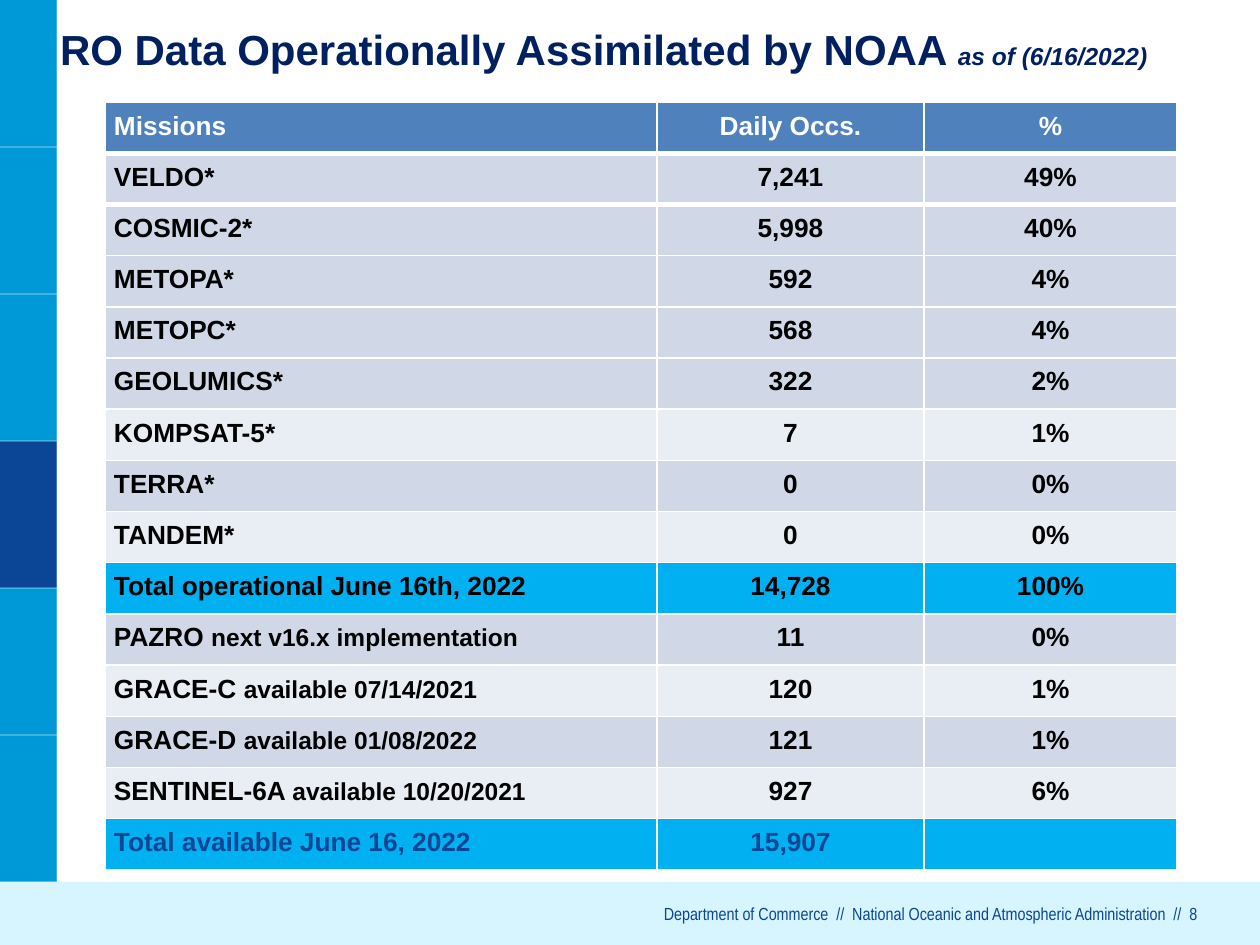
from dataclasses import dataclass
from lxml.etree import SubElement as Sub
from pptx import Presentation
from pptx.dml.color import RGBColor as RGB
from pptx.enum.shapes import MSO_CONNECTOR as Conn, MSO_SHAPE as Kind
from pptx.enum.text import MSO_ANCHOR as Anchor, MSO_AUTO_SIZE as Fit, PP_ALIGN as Align
from pptx.oxml.ns import qn
from pptx.util import Pt


@dataclass(frozen=True)
class Theme:
    sans: str = "Arial"
    thin: str = "Arial Narrow"
    white: str = "FFFFFF"
    black: str = "000000"
    navy: str = "002060"
    sky: str = "0099D8"
    deep: str = "0B4596"
    pale: str = "D6F5FF"
    head: str = "4F81BD"
    dark: str = "D0D8E8"
    light: str = "E9EDF4"
    total: str = "00B0F0"
    big: int = 24
    mid: int = 15
    small: int = 14
    foot: int = 10


T = Theme()
SCALE = 914400 / 126

# Each row: fill, text colour, name runs, daily count, share
ROWS = [
    (T.head, T.white, ["Missions"], "Daily Occs.", "%"),
    (T.dark, T.black, ["VELDO*"], "7,241", "49%"),
    (T.dark, T.black, ["COSMIC-2*"], "5,998", "40%"),
    (T.dark, T.black, ["METOPA*"], "592", "4%"),
    (T.dark, T.black, ["METOPC*"], "568", "4%"),
    (T.dark, T.black, ["GEOLUMICS*"], "322", "2%"),
    (T.light, T.black, ["KOMPSAT-5*"], "7", "1%"),
    (T.dark, T.black, ["TERRA*"], "0", "0%"),
    (T.light, T.black, ["TANDEM*"], "0", "0%"),
    (T.total, T.black, ["Total operational June 16th, 2022"], "14,728", "100%"),
    (T.dark, T.black, ["PAZRO ", "next v16.x implementation"], "11", "0%"),
    (T.light, T.black, ["GRACE-C ", "available 07/14/2021"], "120", "1%"),
    (T.dark, T.black, ["GRACE-D ", "available 01/08/2022"], "121", "1%"),
    (T.light, T.black, ["SENTINEL-6A ", "available 10/20/2021"], "927", "6%"),
    (T.total, T.deep, ["Total available June 16, 2022"], "15,907", ""),
]


def px(n):
    return round(n * SCALE)


def add_run(para, text, size, color, bold=False, slant=False, face=T.sans):
    run = para.add_run()
    run.text = text
    font = run.font
    font.name, font.size = face, Pt(size)
    font.bold, font.italic = bold, slant
    font.color.rgb = RGB.from_string(color)


def set_frame(frame, anchor):
    frame.margin_left = frame.margin_right = 0
    frame.margin_top = frame.margin_bottom = 0
    frame.word_wrap, frame.auto_size = True, Fit.NONE
    frame.vertical_anchor = anchor


def add_rect(shapes, box, color):
    rect = shapes.add_shape(Kind.RECTANGLE, *map(px, box))
    rect.shadow.inherit = False
    rect.fill.solid()
    rect.fill.fore_color.rgb = RGB.from_string(color)
    rect.line.fill.background()


def add_rule(shapes, *ends):
    rule = shapes.add_connector(Conn.STRAIGHT, *map(px, ends))
    rule.line.width = Pt(0.75)
    rule.line.color.rgb = RGB.from_string(T.white)
    props = rule.element.spPr
    tint = props.find(".//" + qn("a:srgbClr"))
    Sub(tint, qn("a:alpha"), val="40000")
    Sub(props, qn("a:effectLst"))


def add_rail(slide, box):
    """Side rail of equal tiles, one of them highlighted."""
    x, y, w, h = box
    tile = 147
    shapes = slide.shapes.add_group_shape().shapes
    add_rect(shapes, box, T.sky)
    add_rect(shapes, (x, y + 3 * tile, w, tile), T.deep)
    for i in range(1, 7):
        add_rule(shapes, x, y + i * tile, x + w, y + i * tile)
    add_rule(shapes, x + w, y, x + w, y + h)


def add_footer(slide, box):
    x, y, w, h = box
    add_rect(slide.shapes, box, T.pale)
    note = slide.shapes.add_textbox(*map(px, (x + 199, y + 21, w - 262, 21)))
    set_frame(note.text_frame, Anchor.TOP)
    para = note.text_frame.paragraphs[0]
    para.alignment = Align.RIGHT
    text = "Department of Commerce  //  National Oceanic and Atmospheric Administration  //  8"
    add_run(para, text, T.foot, T.deep, face=T.thin)


def add_edges(cell, top, base):
    props = cell._tc.get_or_add_tcPr()
    for side, width in (("L", 1), ("R", 1), ("T", top), ("B", base)):
        edge = Sub(props, qn("a:ln" + side), w=str(Pt(width)))
        Sub(Sub(edge, qn("a:solidFill")), qn("a:srgbClr"), val=T.white)


def fill_cell(cell, fill, color, runs, align):
    cell.fill.solid()
    cell.fill.fore_color.rgb = RGB.from_string(fill)
    cell.margin_left = cell.margin_right = px(9)
    cell.margin_top = cell.margin_bottom = px(5)
    para = cell.text_frame.paragraphs[0]
    para.alignment, para.line_spacing = align, 1.15
    for text, size in zip(runs, (T.mid, T.small)):
        if text:
            add_run(para, text, size, color, bold=True)


def add_grid(slide, box):
    """Mission table; thick rules lie under the first two rows."""
    frame = slide.shapes.add_table(len(ROWS), 3, *map(px, box))
    table = frame.table
    table.first_row = table.horz_banding = False
    for col, w in zip(table.columns, (552, 267, box[2] - 819)):
        col.width = px(w)
    for i, (fill, color, name, count, share) in enumerate(ROWS):
        table.rows[i].height = px(box[3] / len(ROWS))
        top, base = 3 if i in (1, 2) else 1, 3 if i < 2 else 1
        for j, runs in enumerate((name, [count], [share])):
            cell = table.cell(i, j)
            add_edges(cell, top, base)
            fill_cell(cell, fill, color, runs, Align.CENTER if j else Align.LEFT)


def set_title(slide, box):
    title = slide.shapes.title
    title.left, title.top, title.width, title.height = map(px, box)
    set_frame(title.text_frame, Anchor.BOTTOM)
    para = title.text_frame.paragraphs[0]
    para.alignment = Align.LEFT
    add_run(para, "RO Data Operationally Assimilated by NOAA ", T.big, T.navy, bold=True)
    add_run(para, "as of (6/16/2022)", T.small, T.navy, bold=True, slant=True)


def main():
    deck = Presentation()
    deck.slide_width, deck.slide_height = px(1260), px(945)
    slide = deck.slides.add_slide(deck.slide_layouts[5])
    add_rail(slide, (0, 0, 57, 945))
    add_footer(slide, (0, 882, 1260, 63))
    add_grid(slide, (105, 102, 1072, 768))
    set_title(slide, (60, -19, 1129, 93))
    deck.save("out.pptx")


if __name__ == "__main__":
    main()
